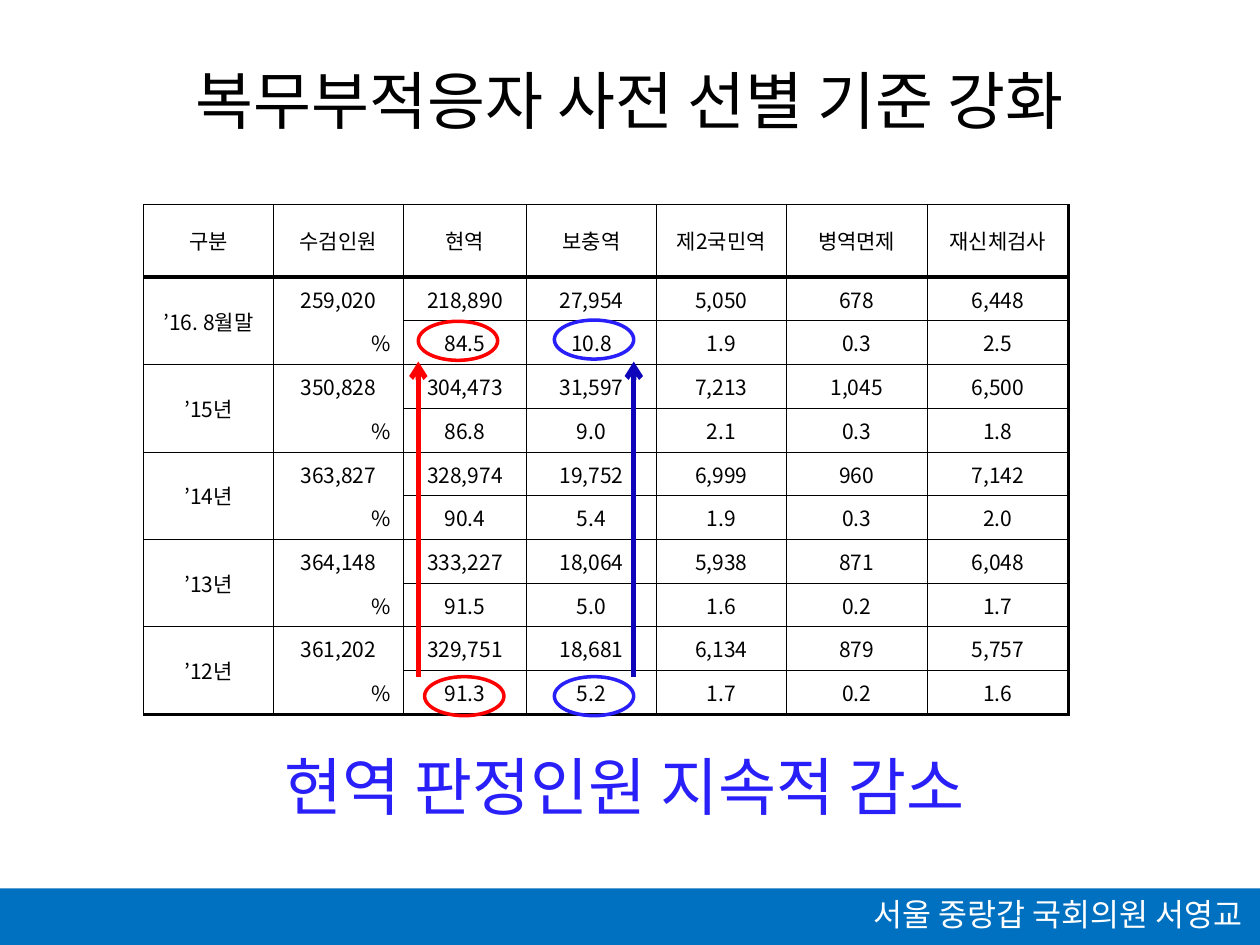
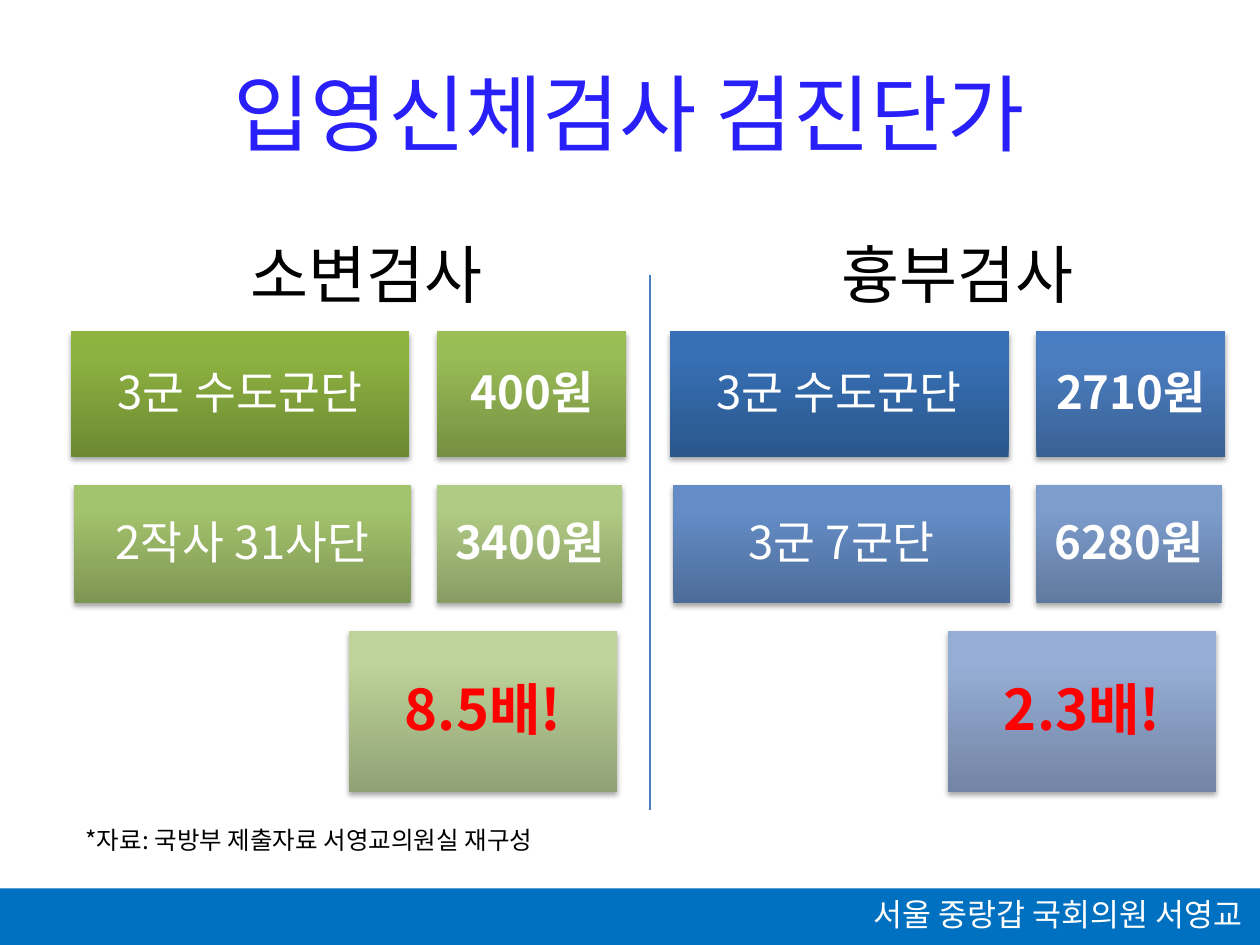
import lxml.etree
import pptx
import pptx.dml.color
import pptx.enum.shapes
import pptx.enum.text
import pptx.oxml
import pptx.oxml.ns
import pptx.util

Inches = pptx.util.Inches
Pt = pptx.util.Pt
RGB = pptx.dml.color.RGBColor.from_string
SHAPE = pptx.enum.shapes.MSO_SHAPE
ALIGN = pptx.enum.text.PP_ALIGN
MIDDLE = pptx.enum.text.MSO_ANCHOR.MIDDLE
qn = pptx.oxml.ns.qn

FONT = "Noto Sans CJK KR"
COLORS = {
    "black": "000000",
    "white": "FFFFFF",
    "band": "0070C0",
    "accent": "291FF9",
    "red": "FF0000",
    "arrow blue": "0E05BB",
    "divider": "4B7EBC",
}


def write(frame, text, size, color, align=ALIGN.CENTER, bold=False):
    frame.text = text
    para = frame.paragraphs[0]
    para.alignment = align
    font = para.runs[0].font
    font.size = Pt(size)
    font.name = FONT
    font.bold = bold
    font.color.rgb = RGB(COLORS[color])
    east_asian = lxml.etree.SubElement(para.runs[0]._r.get_or_add_rPr(), qn("a:ea"))
    east_asian.set("typeface", FONT)
    return para


def add_text(page, place, text, size, color, align=ALIGN.CENTER, wrap=True):
    box = page.shapes.add_textbox(*map(Inches, place))
    box.text_frame.word_wrap = wrap
    box.text_frame.auto_size = pptx.enum.text.MSO_AUTO_SIZE.SHAPE_TO_FIT_TEXT
    write(box.text_frame, text, size, color, align)


deck = pptx.Presentation()
deck.slide_width = Inches(10)
deck.slide_height = Inches(7.5)

titles = [
    ("복무부적응자 사전 선별 기준 강화", (1.03, 0.44, 7.94, 0.71), 36, "black"),
    ("입영신체검사 검진단가", (1.29, 0.44, 7.41, 0.91), 48, "accent"),
]
pages = []
for title, place, size, color in titles:
    page = deck.slides.add_slide(deck.slide_layouts[6])
    add_text(page, place, title, size, color, wrap=False)
    band = page.shapes.add_shape(SHAPE.RECTANGLE, 0, Inches(7.05), Inches(10), Inches(0.45))
    band.shadow.inherit = False
    band.fill.solid()
    band.fill.fore_color.rgb = RGB(COLORS["band"])
    band.line.fill.background()
    add_text(page, (6.02, 7.05, 3.94, 0.41), "서울 중랑갑 국회의원 서영교", 18, "white", ALIGN.RIGHT)
    pages.append(page)
screening, prices = pages

add_text(screening, (1.06, 5.88, 7.8, 0.71), "현역 판정인원 지속적 감소", 36, "accent")

rows = [
    ["구분", "수검인원", "현역", "보충역", "제2국민역", "병역면제", "재신체검사"],
    ["’16. 8월말", "259,020", "218,890", "27,954", "5,050", "678", "6,448"],
    ["", "%", "84.5", "10.8", "1.9", "0.3", "2.5"],
    ["’15년", "350,828", "304,473", "31,597", "7,213", "1,045", "6,500"],
    ["", "%", "86.8", "9.0", "2.1", "0.3", "1.8"],
    ["’14년", "363,827", "328,974", "19,752", "6,999", "960", "7,142"],
    ["", "%", "90.4", "5.4", "1.9", "0.3", "2.0"],
    ["’13년", "364,148", "333,227", "18,064", "5,938", "871", "6,048"],
    ["", "%", "91.5", "5.0", "1.6", "0.2", "1.7"],
    ["’12년", "361,202", "329,751", "18,681", "6,134", "879", "5,757"],
    ["", "%", "91.3", "5.2", "1.7", "0.2", "1.6"],
]
last_row = len(rows) - 1
last_column = len(rows[0]) - 1
table = screening.shapes.add_table(
    len(rows), len(rows[0]), Inches(1.14), Inches(1.62), Inches(7.32), Inches(4.05)
).table
table.first_row = False
table.horz_banding = False
for column, width in zip(table.columns, [1.03, 1.03, 0.98, 1.03, 1.03, 1.12, 1.12]):
    column.width = Inches(width)
for index, row in enumerate(table.rows):
    row.height = Inches(0.58) if index == 0 else Inches((4.05 - 0.58) / last_row)
for top in range(1, last_row, 2):
    table.cell(top, 0).merge(table.cell(top + 1, 0))

edge_widths = {0: 0.28, 1: 2.55, len(rows): 1.7}
for r, values in enumerate(rows):
    for c, value in enumerate(values):
        cell = table.cell(r, c)
        cell.vertical_anchor = MIDDLE
        if value:
            align = ALIGN.RIGHT if value == "%" else ALIGN.CENTER
            write(cell.text_frame, value, 12, "black", align)
        starts_pair = r % 2 == 1
        bottom_edge = r + 2 if c == 0 and starts_pair else r + 1
        borders = {
            "a:lnL": 0.28 if c == 0 else 0.56,
            "a:lnR": 1.7 if c == last_column else 0.56,
            "a:lnT": edge_widths.get(r, 0.56),
            "a:lnB": edge_widths.get(bottom_edge, 0.56),
        }
        if c == 1 and r > 0:
            borders["a:lnB" if starts_pair else "a:lnT"] = 0
        for tag, width in borders.items():
            border = lxml.etree.SubElement(cell._tc.get_or_add_tcPr(), qn(tag), w=str(Pt(width)))
            if width:
                paint = lxml.etree.SubElement(border, qn("a:solidFill"))
                lxml.etree.SubElement(paint, qn("a:srgbClr"), val=COLORS["black"])
            else:
                lxml.etree.SubElement(border, qn("a:noFill"))
        cell.fill.background()

rings = [(3.32, 2.55, "red"), (3.37, 5.37, "red"), (4.4, 2.54, "accent"), (4.4, 5.37, "accent")]
for left, top, color in rings:
    ring = screening.shapes.add_shape(
        SHAPE.OVAL, Inches(left), Inches(top), Inches(0.63), Inches(0.31)
    )
    ring.shadow.inherit = False
    ring.fill.background()
    ring.line.color.rgb = RGB(COLORS[color])
    ring.line.width = Pt(2)

lines = [
    (screening, 3.32, 5.37, 2.87, "red", 3, True),
    (screening, 5.03, 5.37, 2.87, "arrow blue", 3, True),
    (prices, 5.16, 2.18, 6.43, "divider", 0.75, False),
]
for page, x, start, end, color, width, has_arrow in lines:
    line = page.shapes.add_connector(
        pptx.enum.shapes.MSO_CONNECTOR.STRAIGHT, Inches(x), Inches(start), Inches(x), Inches(end)
    )
    line.line.color.rgb = RGB(COLORS[color])
    line.line.width = Pt(width)
    if has_arrow:
        lxml.etree.SubElement(line.line._get_or_add_ln(), qn("a:tailEnd"), type="arrow")
    lxml.etree.SubElement(line._element.spPr, qn("a:effectLst"))

card_places = [
    (0.56, 2.63, 2.69, 1),
    (3.47, 2.63, 1.5, 1),
    (0.59, 3.85, 2.67, 0.94),
    (3.47, 3.85, 1.47, 0.94),
    (2.77, 5.01, 2.13, 1.28),
]
exams = [
    ("소변검사", 1.1, 0, [
        ("3군 수도군단", ["6C8932", "8DB141", "8EB43F"]),
        ("400원", ["759042", "99BB56", "9ABE54"]),
        ("2작사 31사단", ["7E9654", "A4C36D", "A5C56B"]),
        ("3400원", ["889C65", "B0CB83", "B1CD82"]),
        ("8.5배!", ["91A276", "BDD399", "BED599"]),
    ]),
    ("흉부검사", 5.79, 4.755, [
        ("3군 수도군단", ["2A568B", "3770B5", "3570B8"]),
        ("2710원", ["3A6194", "4B7EC1", "497EC4"]),
        ("3군 7군단", ["4D6C99", "648DC7", "638DCA"]),
        ("6280원", ["60799E", "7D9DCD", "7C9DD0"]),
        ("2.3배!", ["7385A4", "96ADD5", "95ADD7"]),
    ]),
]
namespace = pptx.oxml.ns.nsdecls("a")
for heading, heading_left, shift, cards in exams:
    add_text(prices, (heading_left, 1.82, 3.62, 0.71), heading, 36, "black")
    group = prices.shapes.add_group_shape()
    for (left, top, width, height), (text, shades) in zip(card_places, cards):
        card = group.shapes.add_shape(
            SHAPE.RECTANGLE, Inches(left + shift), Inches(top), Inches(width), Inches(height)
        )
        card.line.fill.background()
        stops = "".join(
            f'<a:gs pos="{position}"><a:srgbClr val="{shade}"/></a:gs>'
            for position, shade in zip((0, 80000, 100000), shades)
        )
        gradient = pptx.oxml.parse_xml(
            f'<a:gradFill {namespace} rotWithShape="1"><a:gsLst>{stops}</a:gsLst>'
            '<a:lin ang="16200000" scaled="0"/></a:gradFill>'
        )
        card._element.spPr.find(qn("a:prstGeom")).addnext(gradient)
        shadow = pptx.oxml.parse_xml(
            f'<a:effectLst {namespace}><a:outerShdw blurRad="{Pt(3.1)}" dist="{Pt(1.8)}" '
            'dir="5400000" rotWithShape="0"><a:srgbClr val="000000"><a:alpha val="35000"/>'
            '</a:srgbClr></a:outerShdw></a:effectLst>'
        )
        card._element.spPr.append(shadow)

        is_ratio = text.endswith("!")
        frame = card.text_frame
        frame.word_wrap = True
        frame.vertical_anchor = MIDDLE
        inset = Inches(0.13 if is_ratio else 0.11)
        frame.margin_left = frame.margin_right = inset
        frame.margin_top = frame.margin_bottom = inset
        size, color = (32, "red") if is_ratio else (26, "white")
        para = write(frame, text, size, color, bold=is_ratio or text.endswith("원"))
        para.line_spacing = 0.9

add_text(
    prices, (0.58, 6.5, 4.72, 0.34), "*자료: 국방부 제출자료 서영교의원실 재구성", 14, "black", ALIGN.LEFT
)

deck.save("out.pptx")
